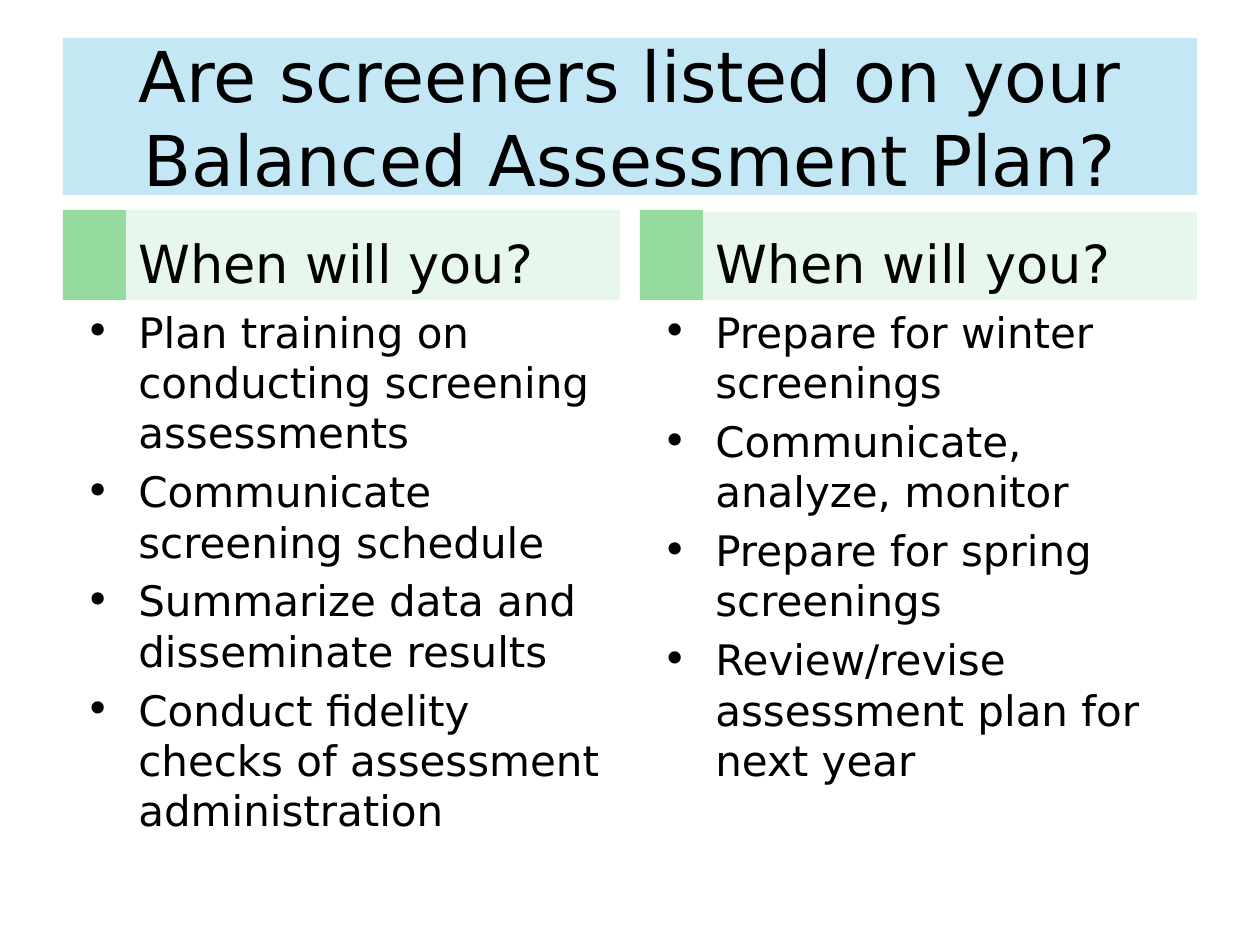
from dataclasses import dataclass

import lxml.etree
import pptx
import pptx.dml.color
import pptx.enum.shapes
import pptx.enum.text
import pptx.oxml.ns
import pptx.util

RGB = pptx.dml.color.RGBColor
ALIGN = pptx.enum.text.PP_ALIGN
ANCHOR = pptx.enum.text.MSO_ANCHOR
QN = pptx.oxml.ns.qn

SKY = RGB(0xA9, 0xDC, 0xF2)
GREEN = RGB(0x95, 0xDA, 0x9F)
MINT = RGB(0xE8, 0xF7, 0xEB)
BLACK = RGB(0, 0, 0)
FONT = "DejaVu Sans"
SCALE = 914400 / 126

EDGE, WIDE = 63, 1134
TAB, COL = 63, 557
BASE, TALL = 300, 544
HANG = 53


@dataclass
class Column:
    left: int
    top: int
    head: str
    items: list[str]


COLUMNS = [
    Column(EDGE, 210, "When will you?", [
        "Plan training on conducting screening assessments",
        "Communicate screening schedule",
        "Summarize data and disseminate results",
        "Conduct fidelity checks of assessment administration",
    ]),
    Column(640, 212, "When will you?", [
        "Prepare for winter screenings",
        "Communicate, analyze, monitor",
        "Prepare for spring screenings",
        "Review/revise assessment plan for next year",
    ]),
]


def px(size: int) -> int:
    return round(size * SCALE)


def bar(slide, left: int, top: int, width: int, height: int, color: RGB):
    """Add a plain filled rectangle."""
    shape = slide.shapes.add_shape(
        pptx.enum.shapes.MSO_SHAPE.RECTANGLE,
        px(left), px(top), px(width), px(height))
    shape.shadow.inherit = False
    shape.fill.solid()
    shape.fill.fore_color.rgb = color
    shape.line.fill.background()
    return shape


def write(shape, text: str, size: int, align: ALIGN, anchor: ANCHOR) -> None:
    """Fill a shape with one paragraph per line of text."""
    frame = shape.text_frame
    frame.word_wrap = True
    frame.vertical_anchor = anchor
    frame.text = text
    for para in frame.paragraphs:
        para.alignment = align
        for run in para.runs:
            run.font.name = FONT
            run.font.size = pptx.util.Pt(size)
            run.font.color.rgb = BLACK


def fade(shape, percent: int) -> None:
    """Set the opacity of a solid fill."""
    color = shape.fill._xPr.find(QN("a:solidFill"))[0]
    lxml.etree.SubElement(color, QN("a:alpha"), val=str(percent * 1000))


def bullet(para) -> None:
    props = para._p.get_or_add_pPr()
    props.set("marL", str(px(TAB)))
    props.set("indent", str(-px(HANG)))
    lxml.etree.SubElement(props, QN("a:buFont"), typeface=FONT)
    lxml.etree.SubElement(props, QN("a:buChar"), char="•")


def draw(slide, col: Column) -> None:
    bar(slide, col.left, 210, TAB, BASE - 210, GREEN)
    head = bar(slide, col.left + TAB, col.top, COL - TAB, BASE - col.top, MINT)
    write(head, col.head, 30, ALIGN.LEFT, ANCHOR.BOTTOM)
    box = slide.shapes.add_textbox(px(col.left), px(BASE), px(COL), px(TALL))
    write(box, "\n".join(col.items), 24, ALIGN.LEFT, ANCHOR.TOP)
    for index, para in enumerate(box.text_frame.paragraphs):
        bullet(para)
        if index:
            para.space_before = pptx.util.Pt(4.8)


def main() -> None:
    deck = pptx.Presentation()
    deck.slide_width, deck.slide_height = px(1260), px(945)
    slide = deck.slides.add_slide(deck.slide_layouts[6])
    title = bar(slide, EDGE, 38, WIDE, 157, SKY)
    fade(title, 68)
    write(title, "Are screeners listed on your Balanced Assessment Plan?",
          40, ALIGN.CENTER, ANCHOR.MIDDLE)
    for col in COLUMNS:
        draw(slide, col)
    deck.save("out.pptx")


if __name__ == "__main__":
    main()
